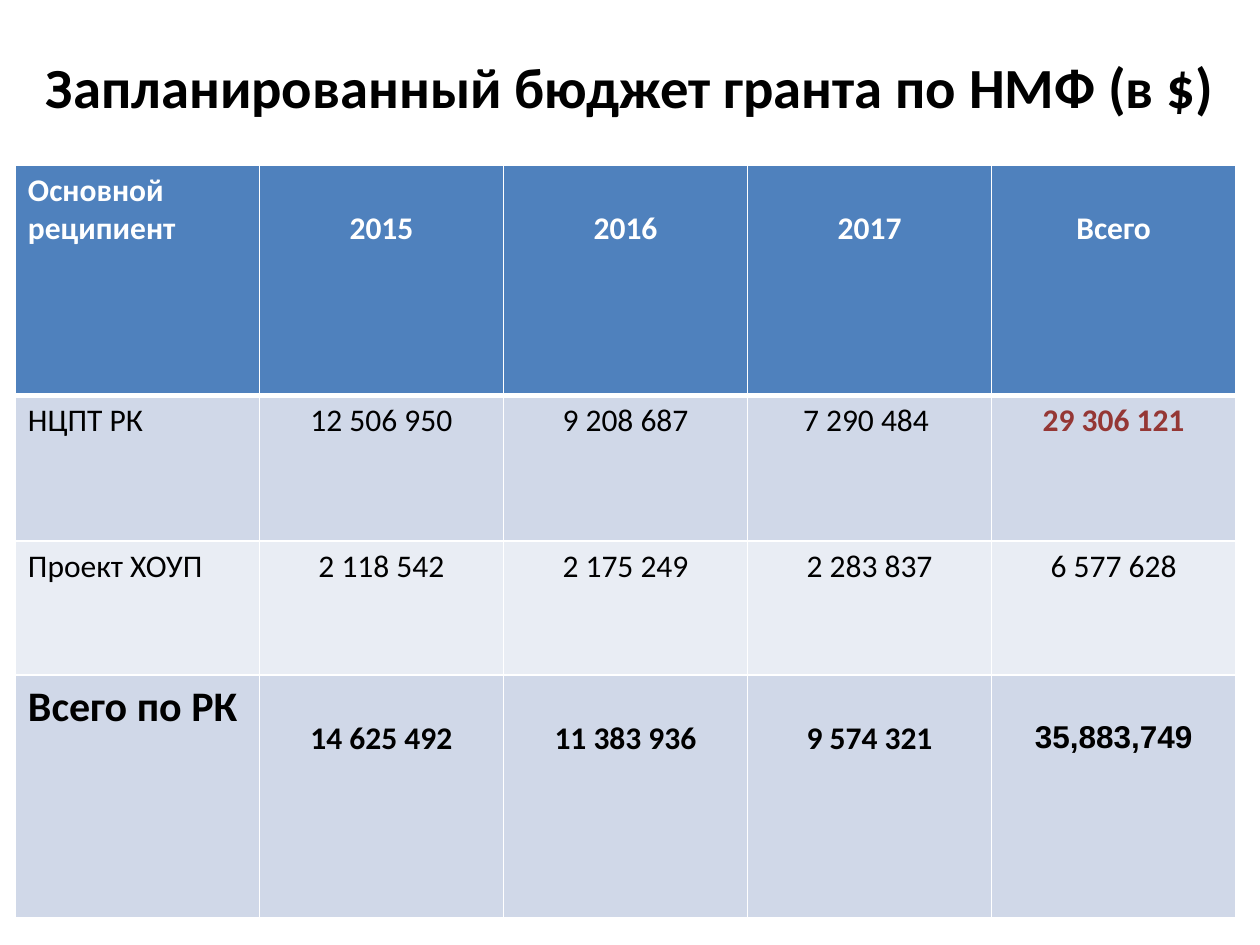
from dataclasses import dataclass

from lxml import etree
from pptx import Presentation
from pptx.dml.color import RGBColor
from pptx.enum import text
from pptx.oxml import ns
from pptx.util import Cm, Pt


@dataclass(frozen=True)
class Theme:
    font: str = "Calibri"
    total_font: str = "Arial"
    ink: str = "000000"
    white: str = "FFFFFF"
    header: str = "4F81BD"
    bands: tuple = ("D0D8E8", "E9EDF4")
    accent: str = "953735"
    title_size: float = 32.4
    label_size: float = 24
    body_size: float = 18


THEME = Theme()
TITLE = "Запланированный бюджет гранта по НМФ (в $)"
BUDGET = [
    ["Основной реципиент", "2015", "2016", "2017", "Всего"],
    ["НЦПТ РК", "12 506 950", "9 208 687", "7 290 484 ", "29 306 121"],
    ["Проект ХОУП", "2 118 542", "2 175 249", "2 283 837", "6 577 628"],
    ["Всего по РК", "14 625 492", "11 383 936", "9 574 321", "35,883,749"],
]
ROW_HEIGHTS = [4.64, 2.94, 2.7, 4.9]
LOWERED_TOP = 0.9  # top margin that drops a figure to the second line


def write(frame, words, size, color=THEME.ink, bold=False, font=THEME.font,
          align=text.PP_ALIGN.CENTER):
    frame.text = words
    paragraph = frame.paragraphs[0]
    paragraph.alignment = align
    style = paragraph.runs[0].font
    style.name, style.size, style.bold = font, Pt(size), bold
    style.color.rgb = RGBColor.from_string(color)


def set_borders(cell, top, bottom):
    """Draw white cell borders; top and bottom widths are in points."""
    properties = cell._tc.get_or_add_tcPr()
    for side, width in (("L", 1), ("R", 1), ("T", top), ("B", bottom)):
        line = etree.SubElement(properties, ns.qn(f"a:ln{side}"), w=str(Pt(width)))
        fill = etree.SubElement(line, ns.qn("a:solidFill"))
        etree.SubElement(fill, ns.qn("a:srgbClr"), val=THEME.white)


def add_title(slide, left, top, width, height):
    frame = slide.shapes.add_textbox(Cm(left), Cm(top), Cm(width), Cm(height)).text_frame
    frame.word_wrap = True
    frame.vertical_anchor = text.MSO_ANCHOR.MIDDLE
    write(frame, TITLE, THEME.title_size, bold=True)


def style_budget_cell(cell, words, row, column):
    is_header, is_sum = row == 0, row == len(BUDGET) - 1
    is_label, is_total = column == 0, column == len(BUDGET[0]) - 1
    color = THEME.white if is_header else THEME.ink
    if row == 1 and is_total:
        color = THEME.accent
    write(
        cell.text_frame, words,
        size=THEME.label_size if is_sum and is_label else THEME.body_size,
        color=color,
        bold=is_header or is_sum or color == THEME.accent,
        font=THEME.total_font if is_sum and is_total else THEME.font,
        align=text.PP_ALIGN.LEFT if is_label else text.PP_ALIGN.CENTER,
    )
    if (is_header or is_sum) and not is_label:
        cell.margin_top = Cm(LOWERED_TOP)
    set_borders(cell, top=3 if row == 1 else 1, bottom=3 if is_header else 1)
    cell.fill.solid()
    fill = THEME.header if is_header else THEME.bands[(row - 1) % 2]
    cell.fill.fore_color.rgb = RGBColor.from_string(fill)


def add_budget(slide, left, top, width):
    columns = len(BUDGET[0])
    table = slide.shapes.add_table(
        len(BUDGET), columns, Cm(left), Cm(top), Cm(width), Cm(sum(ROW_HEIGHTS))
    ).table
    for column in table.columns:
        column.width = Cm(width / columns)
    for row, (height, values) in enumerate(zip(ROW_HEIGHTS, BUDGET)):
        table.rows[row].height = Cm(height)
        for column, words in enumerate(values):
            style_budget_cell(table.cell(row, column), words, row, column)


def main():
    deck = Presentation()
    deck.slide_width, deck.slide_height = Cm(25.4), Cm(19.05)
    slide = deck.slides.add_slide(deck.slide_layouts[6])
    add_title(slide, 0.5, 0.76, 24.4, 1.96)
    add_budget(slide, 0.31, 3.33, 24.6)
    deck.save("out.pptx")


if __name__ == "__main__":
    main()
